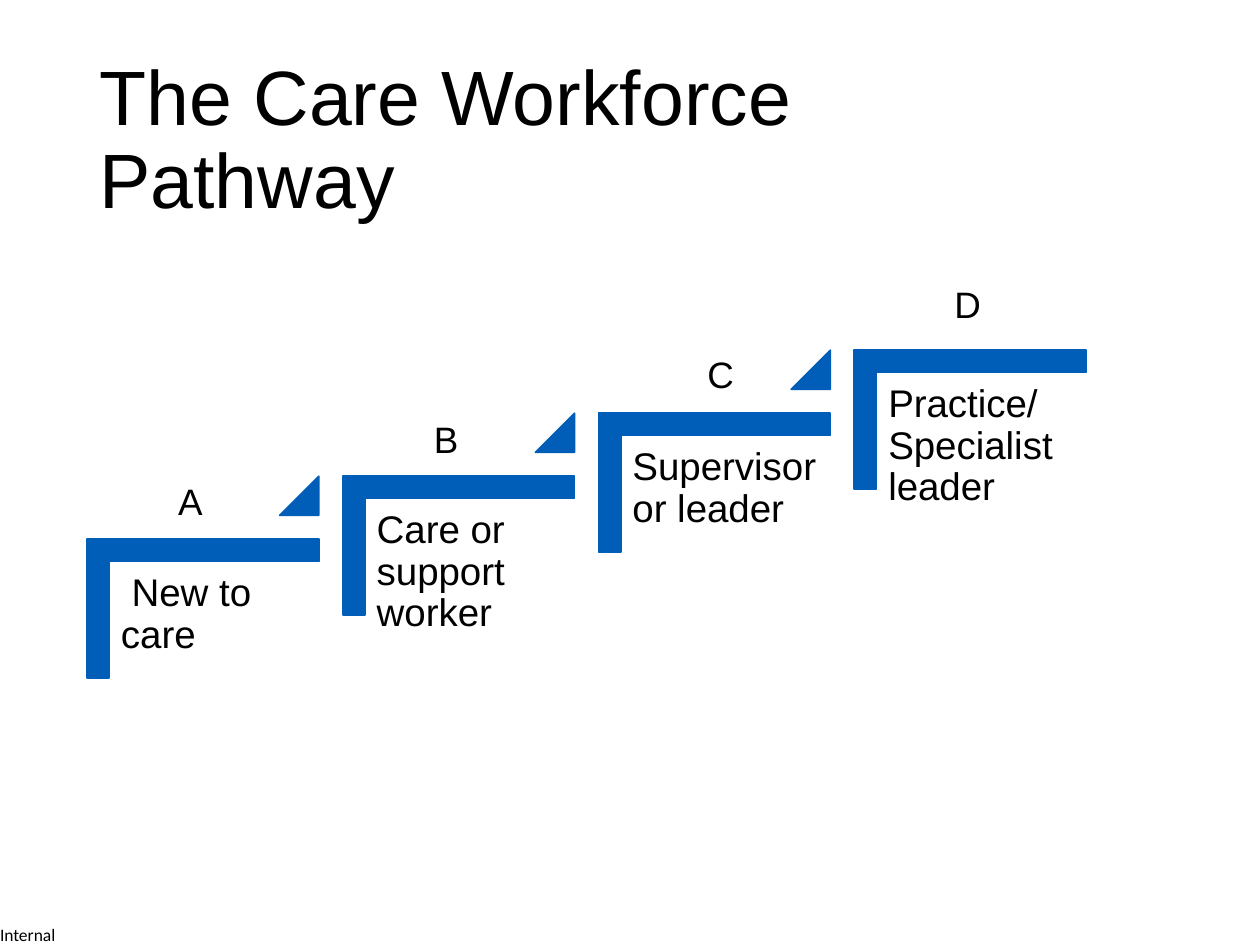
from pptx import Presentation
from pptx.util import Inches, Pt
from pptx.dml.color import RGBColor
from pptx.enum import shapes, text

HUES = {"blue": "005EB8", "ink": "000000"}
DX, DY = 2.03, -0.5
STEPS = [
    (" New to care", "A", (1.05, 3.75, 0.92)),
    ("Care or support worker", "B", (2.9, 3.26, 1.28)),
    ("Supervisor or leader", "C", (5.08, 2.74, 1.28)),
    ("Practice/ Specialist leader", "D", (7.04, 2.19, 1.28)),
]


def hue(name):
    return RGBColor.from_string(HUES[name])


def write(box, words, size, font="Arial", align=text.PP_ALIGN.LEFT,
          space=1.0, wrap=True, inset=None, anchor=text.MSO_ANCHOR.TOP):
    frame = box.text_frame
    frame.word_wrap = wrap
    frame.auto_size = text.MSO_AUTO_SIZE.NONE
    frame.vertical_anchor = anchor
    if inset is not None:
        frame.margin_left = frame.margin_right = Inches(inset)
        frame.margin_top = frame.margin_bottom = Inches(inset)
    para = frame.paragraphs[0]
    para.text = words
    para.alignment = align
    para.line_spacing = space
    for run in para.runs:
        run.font.name = font
        run.font.size = Pt(size)
        run.font.color.rgb = hue("ink")


def label(slide, words, left, top, width, height, **style):
    box = slide.shapes.add_textbox(*map(Inches, (left, top, width, height)))
    write(box, words, **style)


def solid(slide, kind, left, top, width, height, adjust, turn=0):
    shape = slide.shapes.add_shape(kind, *map(Inches, (left, top, width, height)))
    for i, value in enumerate(adjust):
        shape.adjustments[i] = value
    shape.rotation = turn
    shape.shadow.inherit = False
    shape.fill.solid()
    shape.fill.fore_color.rgb = hue("blue")
    shape.line.color.rgb = hue("blue")
    shape.line.width = Pt(1)


def head(slide):
    title = slide.shapes.title
    title.left, title.top = Inches(0.69), Inches(0.4)
    title.width, title.height = Inches(8.62), Inches(1.45)
    write(title, "The Care Workforce \nPathway", size=44, space=0.9,
          anchor=text.MSO_ANCHOR.MIDDLE)


def stair(slide, i, role, last):
    x, y = i * DX, i * DY
    kind = shapes.MSO_SHAPE
    solid(slide, kind.CORNER, 1.06 + x, 3.91 + y, 1.1, 1.84,
          (0.161, 0.161), turn=90)
    label(slide, role, 0.87 + x, 4.46 + y, 1.66, 1.45,
          size=22, space=0.9, inset=0.09)
    if not last:
        solid(slide, kind.ISOSCELES_TRIANGLE, 2.22 + x, 3.78 + y,
              0.31, 0.31, (1,))


def main():
    deck = Presentation()
    deck.slide_width, deck.slide_height = Inches(10), Inches(7.5)
    slide = deck.slides.add_slide(deck.slide_layouts[5])
    label(slide, "Internal", 0, 7.33, 0.51, 0.17, size=10,
          font="Calibri", wrap=False, inset=0)
    head(slide)
    for i, (role, mark, spot) in enumerate(STEPS):
        stair(slide, i, role, i == len(STEPS) - 1)
        label(slide, mark, *spot, 0.45, size=21, align=text.PP_ALIGN.CENTER)
    deck.save("out.pptx")


if __name__ == "__main__":
    main()
